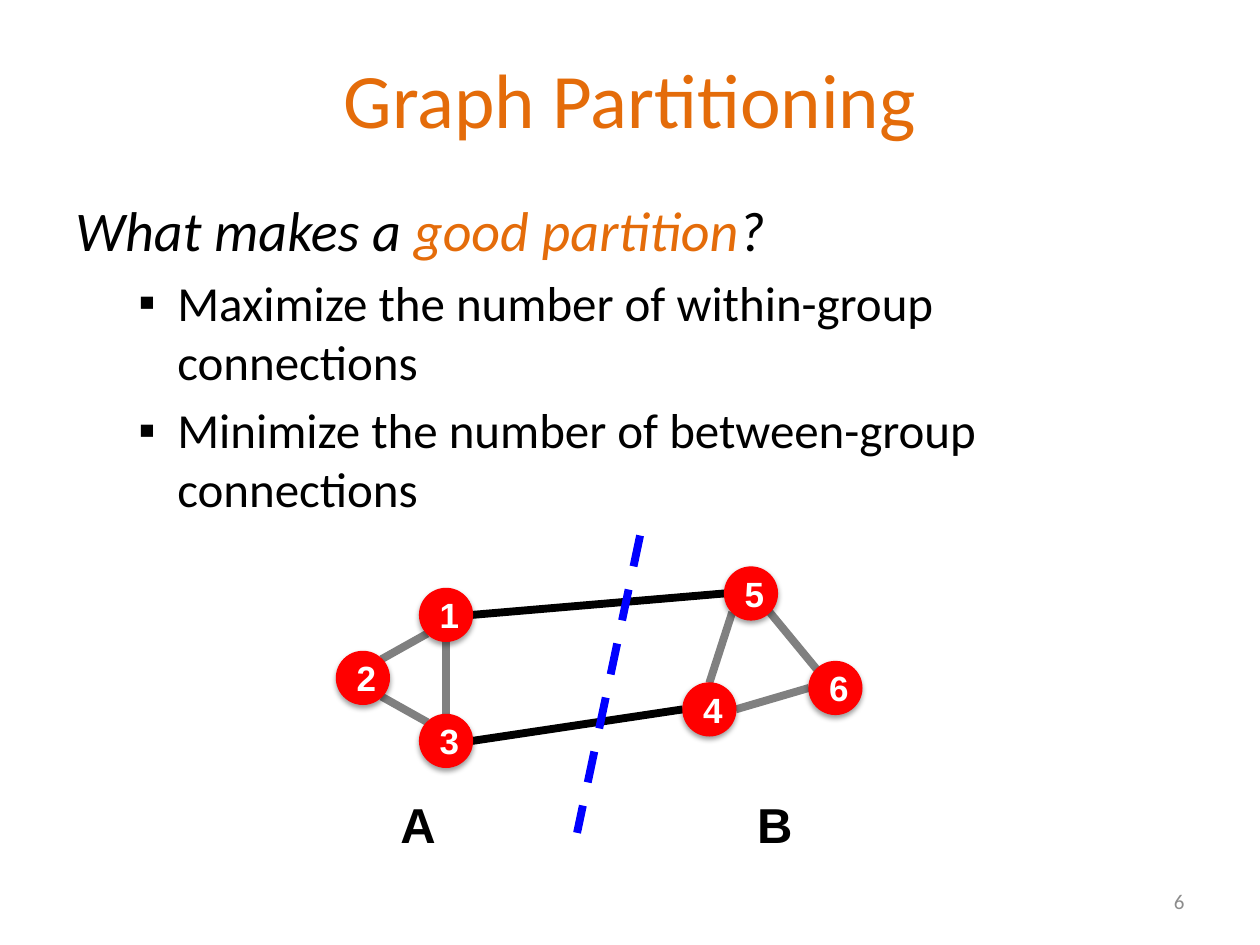
import math

import pptx
import pptx.dml.color
import pptx.enum.dml
import pptx.enum.shapes
import pptx.enum.text
import pptx.oxml
import pptx.oxml.ns
import pptx.util

Inches = pptx.util.Inches
Pt = pptx.util.Pt
ALIGN = pptx.enum.text.PP_ALIGN
MIDDLE = pptx.enum.text.MSO_ANCHOR.MIDDLE
HEX = {"orange": "E46C0A", "black": "000000", "gray": "808080", "pale": "8C8C8C",
       "red": "FF0000", "blue": "0000FF", "white": "FFFFFF"}
COLOR = {name: pptx.dml.color.RGBColor.from_string(code) for name, code in HEX.items()}
NS = pptx.oxml.ns.nsdecls("a")

deck = pptx.Presentation()
deck.slide_width, deck.slide_height = Inches(10), Inches(7.5)
slide = deck.slides.add_slide(deck.slide_layouts[6])
shapes = slide.shapes


def write(para, text, size, color, face="Calibri", bold=False, italic=False):
    run = para.add_run()
    run.text = text
    font = run.font
    font.size, font.name, font.bold, font.italic = Pt(size), face, bold, italic
    font.color.rgb = COLOR[color]


def link(start, end, color):
    """Draw a thick straight line without a shadow."""
    line = shapes.add_connector(pptx.enum.shapes.MSO_CONNECTOR.STRAIGHT,
                                *[Inches(v) for v in (*start, *end)])
    line.line.color.rgb = COLOR[color]
    line.line.width = Pt(4.5)
    line._element.spPr.append(pptx.oxml.parse_xml(f"<a:effectLst {NS}/>"))
    return line


# Title and page number
for text, box, size, color, align in [
    ("Graph Partitioning", (0.5, 0.15, 9, 1.25), 44, "orange", ALIGN.CENTER),
    ("6", (7.17, 6.95, 2.33, 0.4), 12, "pale", ALIGN.RIGHT),
]:
    frame = shapes.add_textbox(*[Inches(v) for v in box]).text_frame
    frame.word_wrap = True
    frame.vertical_anchor = MIDDLE
    frame.paragraphs[0].alignment = align
    write(frame.paragraphs[0], text, size, color)

# Question and its two goals
body = shapes.add_textbox(Inches(0.5), Inches(1.5), Inches(9), Inches(4.95)).text_frame
body.word_wrap = True
ask = body.paragraphs[0]
ask.space_before = Pt(6.4)
for text, color in [("What makes a ", "black"), ("good partition", "orange"), ("?", "black")]:
    write(ask, text, 32, color, italic=True)
for lines in [("Maximize the number of within-group ", "connections"),
              ("Minimize the number of between-group connections",)]:
    goal = body.add_paragraph()
    goal.level = 1
    goal.space_before = Pt(5.6)
    props = goal._p.get_or_add_pPr()
    props.set("marL", str(Inches(0.81)))
    props.set("indent", str(Inches(-0.31)))
    props.append(pptx.oxml.parse_xml(f'<a:buFont {NS} typeface="Arial"/>'))
    props.append(pptx.oxml.parse_xml(f'<a:buChar {NS} char="▪"/>'))
    for i, text in enumerate(lines):
        if i:
            goal.add_line_break()
        write(goal, text, 28, "black")

# Edges: node, angle on its rim (clockwise from the right), node, angle, colour
SIZE = 0.42
nodes = {"1": (3.33, 4.67), "3": (3.33, 5.67), "2": (2.67, 5.17),
         "5": (5.75, 4.5), "4": (5.42, 5.42), "6": (6.42, 5.25)}
edges = [("1", 135, "2", 315, "gray"), ("2", 45, "3", 225, "gray"),
         ("1", 90, "3", 270, "gray"), ("1", 0, "5", 180, "black"),
         ("3", 0, "4", 180, "black"), ("5", 45, "6", 225, "gray"),
         ("4", 0, "6", 180, "gray"), ("5", 135, "4", 270, "gray")]
for a, turn, b, back, color in edges:
    ends = []
    for name, angle in [(a, turn), (b, back)]:
        x, y = nodes[name]
        rad = math.radians(angle)
        ends.append((x + SIZE / 2 * (1 + math.cos(rad)), y + SIZE / 2 * (1 + math.sin(rad))))
    link(*ends, color)

# Nodes
for name, (x, y) in nodes.items():
    node = shapes.add_shape(pptx.enum.shapes.MSO_SHAPE.OVAL,
                            Inches(x), Inches(y), Inches(SIZE), Inches(SIZE))
    node.fill.solid()
    node.fill.fore_color.rgb = COLOR["red"]
    node.line.color.rgb = COLOR["red"]
    node.line.width = Pt(0.75)
    node._element.spPr.append(pptx.oxml.parse_xml(
        f'<a:effectLst {NS}><a:outerShdw blurRad="{Pt(3.1)}" dist="{Pt(1.6)}" dir="5400000" '
        f'rotWithShape="0"><a:srgbClr val="{HEX["black"]}"><a:alpha val="38000"/></a:srgbClr>'
        "</a:outerShdw></a:effectLst>"))
    frame = node.text_frame
    frame.vertical_anchor = MIDDLE
    frame.paragraphs[0].alignment = ALIGN.CENTER
    write(frame.paragraphs[0], name, 20, "white", "Arial", bold=True)

# Cut and group names
cut = link((5.08, 4.25), (4.58, 6.61), "blue")
cut.line.dash_style = pptx.enum.dml.MSO_LINE.DASH
for group, x in [("A", 3.08), ("B", 5.91)]:
    frame = shapes.add_textbox(Inches(x), Inches(6.26), Inches(0.49), Inches(0.57)).text_frame
    frame.word_wrap = False
    frame.auto_size = pptx.enum.text.MSO_AUTO_SIZE.SHAPE_TO_FIT_TEXT
    write(frame.paragraphs[0], group, 28, "black", "Arial", bold=True)

deck.save("out.pptx")
